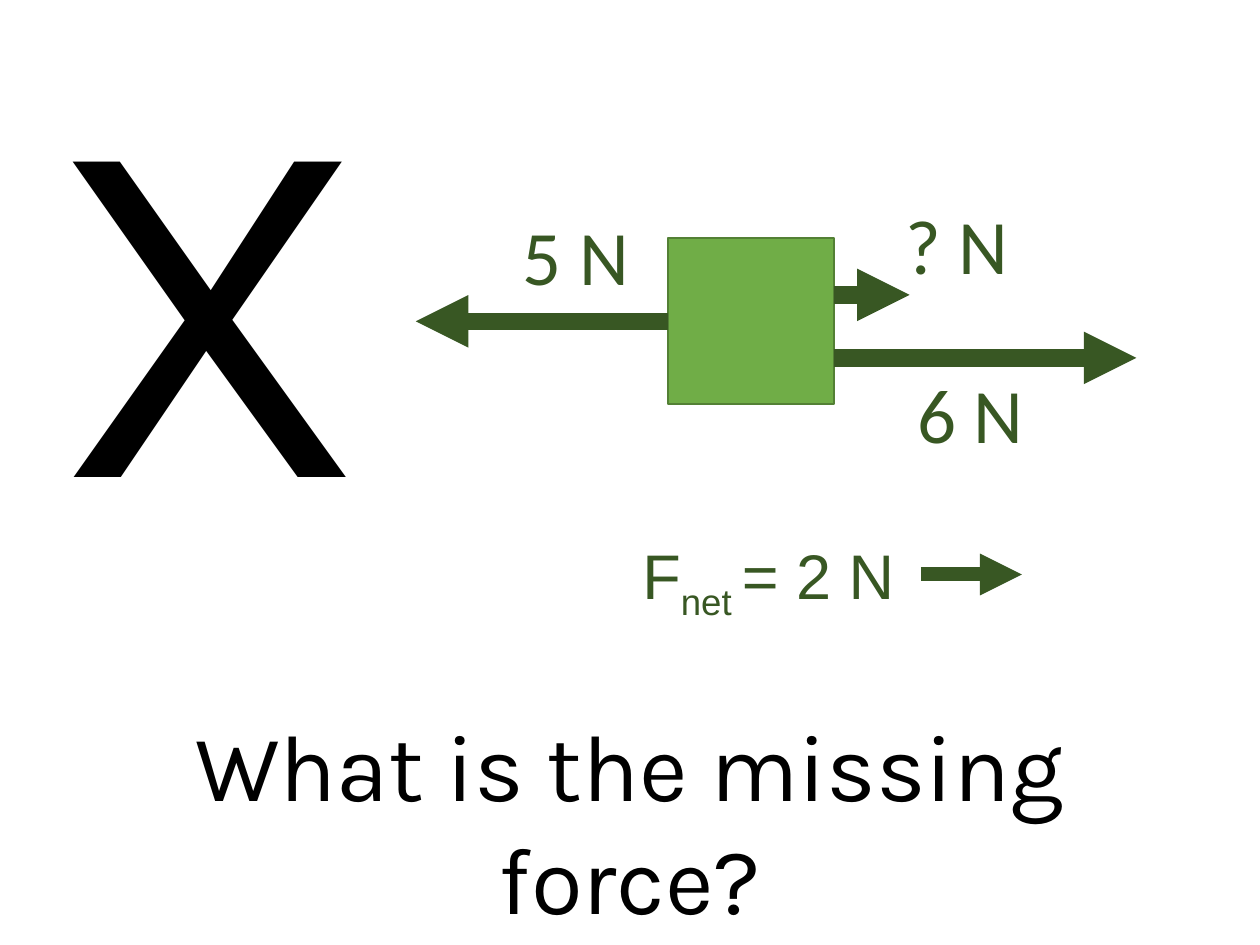
from typing import NamedTuple

from lxml import etree
from pptx import Presentation
from pptx import util as u
from pptx.dml.color import RGBColor
from pptx.enum import shapes, text
from pptx.oxml.ns import qn

Pt = u.Pt

COLORS = {"ink": "000000", "force": "385723", "block": "70AD47", "edge": "538035"}
POINTS_PER_NEWTON = 28.8
BLOCK_LEFT, BLOCK_TOP, BLOCK_SIDE = 381.6, 136.1, 95
BLOCK_RIGHT = BLOCK_LEFT + BLOCK_SIDE
BLOCK_MIDDLE = BLOCK_TOP + BLOCK_SIDE / 2


class Label(NamedTuple):
    runs: tuple[tuple[str, int], ...]  # wording and baseline shift in thousandths
    box: tuple[float, float, float, float]
    size: float
    font: str = "Calibri"
    color: str = "force"
    wrap: bool = False


class Force(NamedTuple):
    start: float
    height: float
    newtons: float  # drawn length to scale, negative to the left
    weight: float = 10
    from_block_side: bool = False


LABELS = [
    Label((("What is the missing force?", 0),), (36, 400.3, 648, 72.7),
          54, "Karla", "ink", True),
    Label((("5 N", 0),), (291.6, 115.9, 75.6, 60.5), 44),
    Label((("? N", 0),), (510.5, 109.4, 73.4, 60.5), 44),
    Label((("6 N", 0),), (517, 205.9, 75.6, 60.5), 44),
    Label((("F", 0), ("net ", -25000), ("= 2 N", 0)), (360, 303.1, 164.9, 51.1),
          36, "Arial"),
]

FORCES = [
    Force(BLOCK_LEFT, BLOCK_MIDDLE, -5, from_block_side=True),
    Force(BLOCK_RIGHT, 204.5, 6),
    Force(BLOCK_RIGHT, 168.5, 1.5),
    Force(526.3, 328.3, 2, weight=8),
]


def rgb(name: str) -> RGBColor:
    return RGBColor.from_string(COLORS[name])


def set_all(target, values: dict) -> None:
    for name, value in values.items():
        setattr(target, name, value)


def style_run(run, font: str, size: float, color: str) -> None:
    set_all(run.font, {"name": font, "size": Pt(size)})
    run.font.color.rgb = rgb(color)


def draw_label(slide, label: Label) -> None:
    frame = slide.shapes.add_textbox(*map(Pt, label.box)).text_frame
    set_all(frame, {"word_wrap": label.wrap,
                    "auto_size": text.MSO_AUTO_SIZE.SHAPE_TO_FIT_TEXT})
    paragraph = frame.paragraphs[0]
    paragraph.alignment = text.PP_ALIGN.CENTER if label.wrap else text.PP_ALIGN.LEFT
    for wording, shift in label.runs:
        run = paragraph.add_run()
        run.text = wording
        style_run(run, label.font, label.size, label.color)
        if shift:
            run.font._element.set("baseline", str(shift))


def draw_force(slide, force: Force, block) -> None:
    end = force.start + force.newtons * POINTS_PER_NEWTON
    arrow = slide.shapes.add_connector(
        shapes.MSO_CONNECTOR.STRAIGHT,
        Pt(force.start), Pt(force.height), Pt(end), Pt(force.height))
    if force.from_block_side:
        arrow.begin_connect(block, 1)
    arrow.line.width = Pt(force.weight)
    arrow.line.color.rgb = rgb("force")
    etree.SubElement(arrow.line._get_or_add_ln(), qn("a:tailEnd"), type="triangle")
    etree.SubElement(arrow._element.spPr, qn("a:effectLst"))


def main() -> None:
    deck = Presentation()
    set_all(deck, {"slide_width": Pt(720), "slide_height": Pt(540)})
    slide = deck.slides.add_slide(deck.slide_layouts[5])

    # Answer letter
    answer = slide.shapes.title
    set_all(answer, {"left": Pt(19.4), "top": Pt(28.1),
                     "width": Pt(201.6), "height": Pt(310.3)})
    set_all(answer.text_frame, {"word_wrap": True,
                                "auto_size": text.MSO_AUTO_SIZE.NONE,
                                "vertical_anchor": text.MSO_ANCHOR.BOTTOM})
    letter = answer.text_frame.paragraphs[0]
    set_all(letter, {"alignment": text.PP_ALIGN.CENTER, "line_spacing": 0.9})
    run = letter.add_run()
    run.text = "X"
    style_run(run, "Karla", 287, "ink")

    # Block
    block = slide.shapes.add_shape(
        shapes.MSO_SHAPE.RECTANGLE,
        Pt(BLOCK_LEFT), Pt(BLOCK_TOP), Pt(BLOCK_SIDE), Pt(BLOCK_SIDE))
    block.shadow.inherit = False
    block.fill.solid()
    block.fill.fore_color.rgb = rgb("block")
    block.line.color.rgb = rgb("edge")
    block.line.width = Pt(1)

    # Force arrows, then question and force labels
    for force in FORCES:
        draw_force(slide, force, block)
    for label in LABELS:
        draw_label(slide, label)

    deck.save("out.pptx")


if __name__ == "__main__":
    main()
